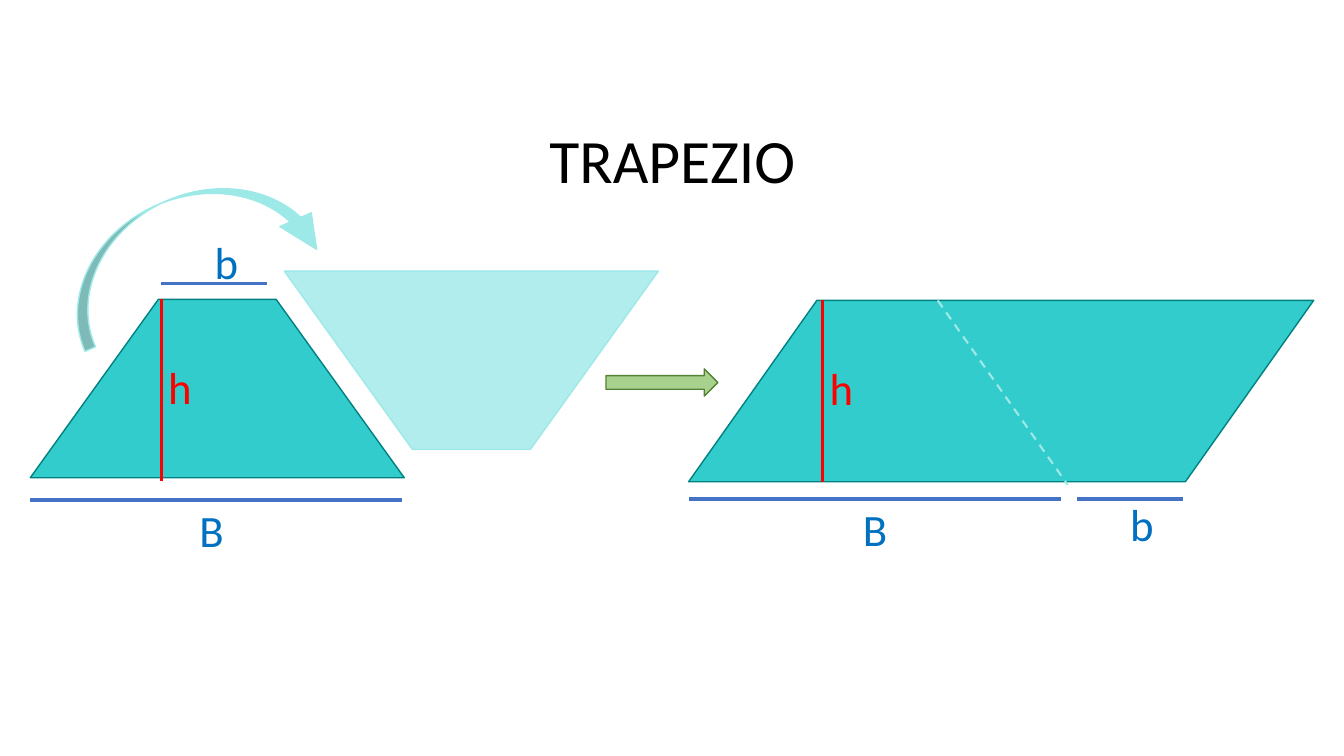
"""Build a slide showing how two trapezoids form a parallelogram."""
from lxml import etree
from pptx import Presentation
from pptx.dml.color import RGBColor
from pptx.enum import dml, shapes, text
from pptx.oxml.ns import qn
from pptx.util import Inches, Pt

BLACK = RGBColor(0x00, 0x00, 0x00)
TEAL = RGBColor(0x33, 0xCC, 0xCC)
DARK_TEAL = RGBColor(0x00, 0x80, 0x80)
LIGHT_TEAL = RGBColor(0x9D, 0xE9, 0xE7)
PALE_TEAL = RGBColor(0xB1, 0xED, 0xEC)
GREEN = RGBColor(0xA9, 0xD1, 0x8E)
DARK_GREEN = RGBColor(0x54, 0x82, 0x35)
RED = RGBColor(0xFF, 0x00, 0x00)
LINE_BLUE = RGBColor(0x44, 0x72, 0xC4)
TEXT_BLUE = RGBColor(0x00, 0x70, 0xC0)
KIND = shapes.MSO_SHAPE


def add_figure(kind, place, adjustments, fill, outline):
    figure = page.shapes.add_shape(kind, *[Inches(n) for n in place])
    figure.shadow.inherit = False
    for index, value in enumerate(adjustments):
        figure.adjustments[index] = value
    figure.fill.solid()
    figure.fill.fore_color.rgb = fill
    figure.line.color.rgb = outline
    figure.line.width = Pt(1)
    return figure


def add_line(parent, ends, color, width):
    line = parent.shapes.add_connector(
        shapes.MSO_CONNECTOR.STRAIGHT, *[Inches(n) for n in ends])
    line.line.color.rgb = color
    line.line.width = Pt(width)
    etree.SubElement(line._element.spPr, qn("a:effectLst"))
    return line


deck = Presentation()
deck.slide_width, deck.slide_height = Inches(13.33), Inches(7.5)
page = deck.slides.add_slide(deck.slide_layouts[5])

add_figure(KIND.TRAPEZOID, (0.3, 2.97, 3.71, 1.77), [0.718], TEAL, DARK_TEAL)

title = page.shapes.title
title.left, title.top = Inches(0.92), Inches(0.9)
title.width, title.height = Inches(11.5), Inches(1.45)
title.text_frame.vertical_anchor = text.MSO_ANCHOR.MIDDLE
para = title.text_frame.paragraphs[0]
para.alignment = text.PP_ALIGN.CENTER
para.line_spacing = 0.9
span = para.add_run()
span.text = "TRAPEZIO"
span.font.name = "Calibri"
span.font.size = Pt(44)
span.font.color.rgb = BLACK

add_figure(KIND.PARALLELOGRAM, (6.83, 2.98, 6.2, 1.8), [0.707], TEAL, DARK_TEAL)
seam = add_line(page, (9.3, 2.98, 10.59, 4.81), LIGHT_TEAL, 1.5)
seam.line.dash_style = dml.MSO_LINE.DASH
add_figure(KIND.RIGHT_ARROW, (6.01, 3.66, 1.11, 0.27), [], GREEN, DARK_GREEN)

turn = add_figure(KIND.CURVED_UP_ARROW, (0.52, 1.95, 2.68, 1.04),
                  [0.109, 0.326, 0.339], LIGHT_TEAL, LIGHT_TEAL)
turn.rotation = 336.2
turn._element.spPr.find(qn("a:xfrm")).set("flipV", "1")
turned = add_figure(KIND.TRAPEZOID, (2.82, 2.69, 3.71, 1.77), [0.718],
                    PALE_TEAL, LIGHT_TEAL)
turned.rotation = 180

measures = [
    ("h", (1.6, 4.77, 1.6, 2.97), (1.57, 3.52, 0.55, 0.37), RED, RED),
    ("B", (0.3, 4.96, 3.99, 4.96), (1.88, 4.94, 0.45, 0.64), LINE_BLUE, TEXT_BLUE),
    ("h", (8.16, 4.78, 8.16, 2.98), (8.13, 3.53, 0.55, 0.37), RED, RED),
    ("B", (6.83, 4.95, 10.52, 4.95), (8.46, 4.93, 0.45, 0.64), LINE_BLUE, TEXT_BLUE),
    ("b", (1.6, 2.81, 2.65, 2.81), (2.03, 2.28, 0.44, 0.64), LINE_BLUE, TEXT_BLUE),
    ("b", (10.68, 4.95, 11.73, 4.95), (11.11, 4.88, 0.44, 0.64), LINE_BLUE, TEXT_BLUE),
]
for letter, ends, place, line_color, text_color in measures:
    measure = page.shapes.add_group_shape()
    add_line(measure, ends, line_color, 2.25)
    box = measure.shapes.add_textbox(*[Inches(n) for n in place])
    box.text_frame.word_wrap = False
    box.text_frame.auto_size = text.MSO_AUTO_SIZE.SHAPE_TO_FIT_TEXT
    span = box.text_frame.paragraphs[0].add_run()
    span.text = letter
    span.font.name = "Calibri"
    span.font.size = Pt(32)
    span.font.color.rgb = text_color

deck.save("out.pptx")
